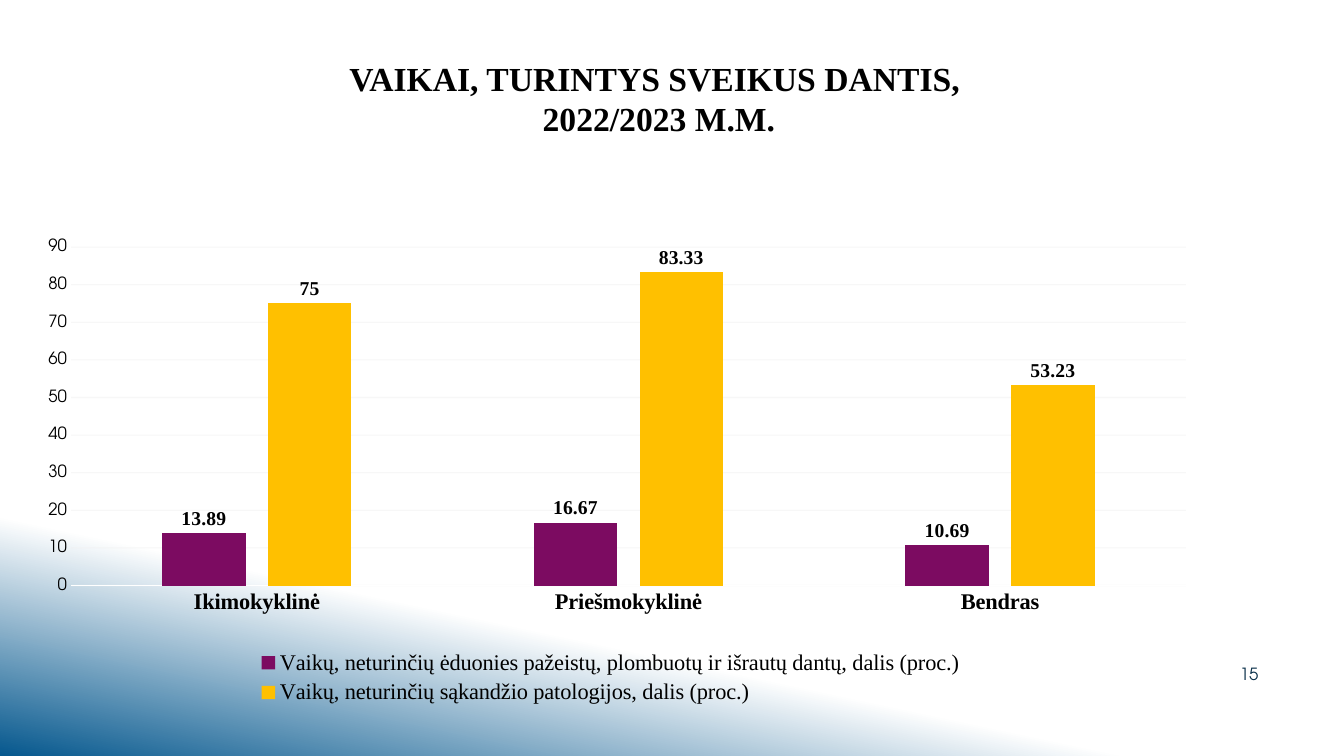
from lxml import etree
from pptx import Presentation
from pptx import util as u
from pptx.chart import data as chart_data
from pptx.dml import color
from pptx.enum import chart as charts, shapes, text
from pptx.oxml import ns, parse_xml

SERIF = "Times New Roman"
SANS = "TeX Gyre Adventor"


def rgb(value):
    return color.RGBColor.from_string(value)


def set_alpha(color_element, percent):
    alpha = etree.SubElement(color_element, ns.qn("a:alpha"))
    alpha.set("val", str(percent * 1000))


class SlideBuilder:
    """Holds the text style and the current slide, and adds each kind of element."""

    def __init__(self, slide):
        self.slide = slide
        self.black = "000000"

    def style(self, font, size, name=SERIF, bold=False, fill=None):
        for key, value in {"size": u.Pt(size), "name": name, "bold": bold}.items():
            setattr(font, key, value)
        font.color.rgb = rgb(fill or self.black)

    def background(self, stops, angle):
        fill = self.slide.background.fill
        fill.gradient()
        fill.gradient_angle = 360 - angle
        for stop, (position, value) in zip(fill.gradient_stops, stops):
            stop.position = position
            stop.color.rgb = rgb(value)
        set_alpha(self.slide.element.xpath(".//p:bg//a:srgbClr")[0], 32)

    def line(self, start, end, width):
        points = [u.Inches(value) for value in (*start, *end)]
        connector = self.slide.shapes.add_connector(shapes.MSO_CONNECTOR.STRAIGHT, *points)
        connector.line.color.rgb = rgb("FFFFFF")
        connector.line.width = u.Pt(width)
        etree.SubElement(connector.element.spPr, ns.qn("a:effectLst"))

    def text(self, words, box, align, anchor, **font):
        shape = self.slide.shapes.add_textbox(*map(u.Inches, box))
        for key, value in {"word_wrap": True, "vertical_anchor": anchor}.items():
            setattr(shape.text_frame, key, value)
        paragraph = shape.text_frame.paragraphs[0]
        paragraph.text = words
        paragraph.alignment = align
        for run in paragraph.runs:
            self.style(run.font, **font)

    def column_chart(self, categories, series, box, plot_box):
        data = chart_data.CategoryChartData()
        data.categories = categories
        for name, values, _ in series:
            data.add_series(name, values)
        frame = self.slide.shapes.add_chart(
            charts.XL_CHART_TYPE.COLUMN_CLUSTERED, *map(u.Inches, box), data)
        chart = frame.chart
        self.style(chart.font, 10, SANS)
        chart.has_title = False
        chart.has_legend = True
        chart.legend.position = charts.XL_LEGEND_POSITION.BOTTOM
        chart.legend.include_in_layout = False
        self.style(chart.legend.font, 16)

        plot = chart.plots[0]
        for key, value in {"gap_width": 219, "overlap": -27, "vary_by_categories": False}.items():
            setattr(plot, key, value)
        for column, (_, _, fill) in zip(plot.series, series):
            column.format.fill.solid()
            column.format.fill.fore_color.rgb = rgb(fill)
            labels = column.data_labels
            labels.show_value = True
            labels.position = charts.XL_LABEL_POSITION.OUTSIDE_END
            self.style(labels.font, 14, bold=True)

        self.axes(chart)
        self.plot_layout(chart, plot_box)

    def axes(self, chart):
        for axis in (chart.category_axis, chart.value_axis):
            axis.major_tick_mark = axis.minor_tick_mark = charts.XL_TICK_MARK.NONE
        category, value = chart.category_axis, chart.value_axis
        self.style(category.tick_labels.font, 16, bold=True)
        category.format.line.color.rgb = rgb("FFFFFF")
        category.format.line.width = u.Pt(0.75)

        self.style(value.tick_labels.font, 12, SANS)
        for key, number in {"minimum_scale": 0, "maximum_scale": 90, "major_unit": 10}.items():
            setattr(value, key, number)
        value.format.line.fill.background()
        grid = value.major_gridlines.format.line
        grid.color.rgb = rgb("F2F2F2")
        grid.width = u.Pt(0.75)
        set_alpha(chart.element.xpath(".//c:majorGridlines//a:srgbClr")[0], 60)

    def plot_layout(self, chart, plot_box):
        area = chart.element.xpath(".//c:plotArea")[0]
        for layout in area.findall(ns.qn("c:layout")):
            area.remove(layout)
        settings = [("layoutTarget", "inner"), ("xMode", "edge"), ("yMode", "edge")]
        settings += zip("xywh", plot_box)
        items = "".join(f'<c:{tag} val="{value}"/>' for tag, value in settings)
        area.insert(0, parse_xml(
            f'<c:layout {ns.nsdecls("c")}><c:manualLayout>{items}</c:manualLayout></c:layout>'))


def main():
    presentation = Presentation()
    presentation.slide_width = u.Inches(13.33)
    presentation.slide_height = u.Inches(7.5)
    builder = SlideBuilder(presentation.slides.add_slide(presentation.slide_layouts[6]))

    builder.background([(0.77, "FFFFFF"), (1, "06588E")], 102)
    for top, run, width in [(3.24, 1, 0.75), (3.49, 3.26, 0.75), (3.59, 2.07, 0.75),
                            (3.42, 1.91, 2.25), (4.03, 1.39, 2.25)]:
        builder.line((13.33, top), (13.33 - run, top + run), width)

    builder.text("VAIKAI, TURINTYS SVEIKUS DANTIS, \v2022/2023 M.M.", (1.87, 0.46, 9.33, 1.02),
                 text.PP_ALIGN.CENTER, text.MSO_ANCHOR.MIDDLE, size=24, bold=True)
    builder.column_chart(
        ["Ikimokyklinė", "Priešmokyklinė", "Bendras"],
        [("Vaikų, neturinčių ėduonies pažeistų, plombuotų ir išrautų dantų, dalis (proc.)",
          (13.89, 16.67, 10.69), "7C0B61"),
         ("Vaikų, neturinčių sąkandžio patologijos, dalis (proc.)",
          (75, 83.33, 53.23), "FFC000")],
        (0.11, 2.31, 11.89, 4.73), (0.05, 0.03, 0.93, 0.71))
    builder.text("15", (11.33, 6.1, 1.25, 0.73), text.PP_ALIGN.RIGHT, text.MSO_ANCHOR.BOTTOM,
                 size=12, name=SANS, fill="0A304A")
    presentation.save("out.pptx")


if __name__ == "__main__":
    main()
